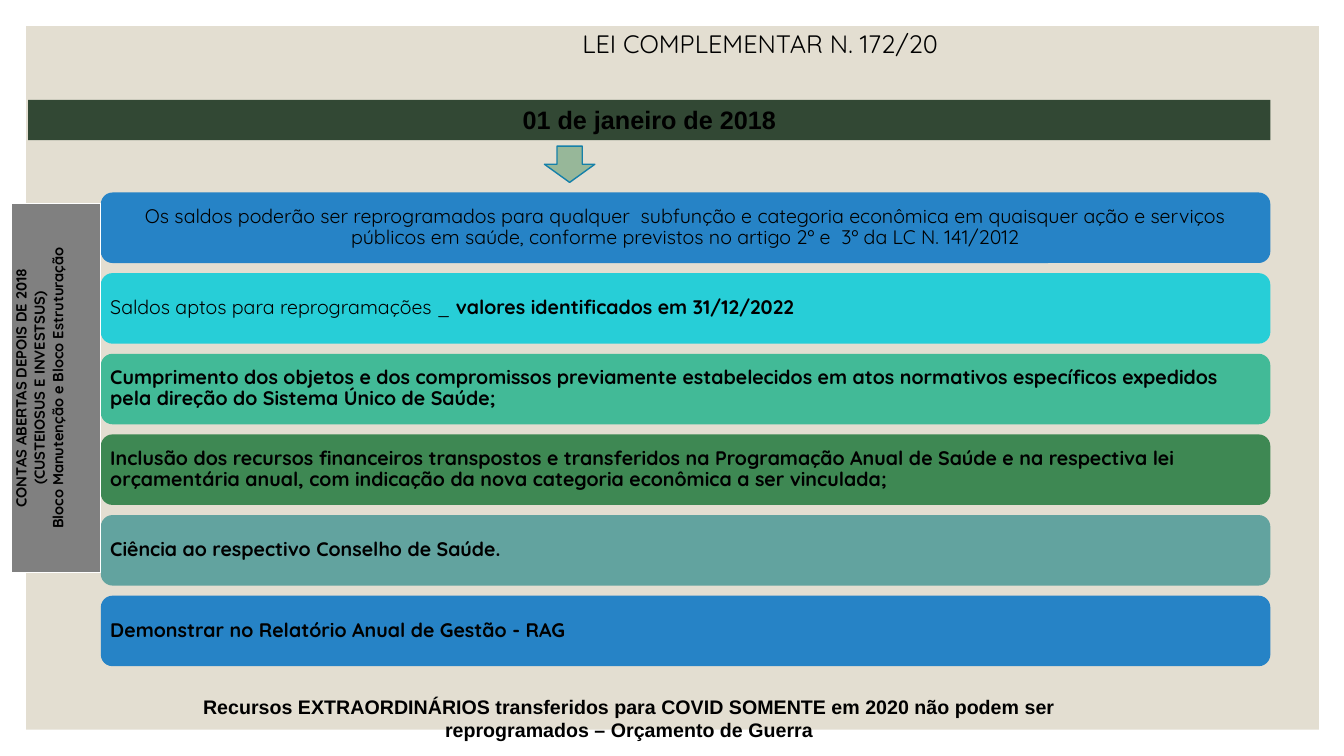
from dataclasses import dataclass

from lxml import etree
from pptx import Presentation
from pptx.dml.color import RGBColor
from pptx.enum import shapes, text
from pptx.oxml import ns
from pptx.util import Inches, Pt


@dataclass(frozen=True)
class Theme:
    body_font: str = "Quicksand"
    accent_font: str = "Arial"
    heading_size: float = 18
    body_size: float = 14
    side_size: float = 10.5
    ink: str = "000000"
    panel: str = "E3DED1"
    date_bar: str = "324834"
    side: str = "808080"
    border: str = "FFFFFF"
    arrow: str = "97B799"
    arrow_line: str = "1580A9"
    blue: str = "2683C6"
    cyan: str = "27CED7"
    mint: str = "42BA97"
    green: str = "3E8853"
    teal: str = "62A39F"


THEME = Theme()
CENTER = text.PP_ALIGN.CENTER
LEFT = text.PP_ALIGN.LEFT
RULES = [
    (THEME.blue, CENTER, [(
        "Os saldos poderão ser reprogramados para qualquer  subfunção e categoria "
        "econômica em quaisquer ação e serviços públicos em saúde, conforme previstos "
        "no artigo 2º e  3º da LC N. 141/2012", False)]),
    (THEME.cyan, LEFT, [
        ("Saldos aptos para reprogramações _ ", False),
        ("valores identificados em 31/12/2022", True)]),
    (THEME.mint, LEFT, [(
        "Cumprimento dos objetos e dos compromissos previamente estabelecidos em atos "
        "normativos específicos expedidos pela direção do Sistema Único de Saúde;", True)]),
    (THEME.green, LEFT, [(
        "Inclusão dos recursos financeiros transpostos e transferidos na Programação "
        "Anual de Saúde e na respectiva lei orçamentária anual, com indicação da nova "
        "categoria econômica a ser vinculada;", True)]),
    (THEME.teal, LEFT, [("Ciência ao respectivo Conselho de Saúde.", True)]),
    (THEME.blue, LEFT, [("Demonstrar no Relatório Anual de Gestão - RAG", True)]),
]
ACCOUNTS = [
    "CONTAS ABERTAS DEPOIS DE 2018",
    "(CUSTEIOSUS E INVESTSUS)",
    "Bloco Manutenção e Bloco Estruturação",
]


def place(*lengths):
    return [Inches(length) for length in lengths]


def write(para, spans, size, font=THEME.body_font, align=CENTER):
    para.alignment = align
    para.font.name = font
    para.font.size = Pt(size)
    para.font.color.rgb = RGBColor.from_string(THEME.ink)
    weights = {bold for _, bold in spans}
    if len(weights) == 1:
        para.font.bold = weights.pop()
    for words, bold in spans:
        span = para.add_run()
        span.text = words
        if para.font.bold is None:
            span.font.bold = bold


def add_block(page, kind, at, fill, line=None):
    block = page.shapes.add_shape(kind, *place(*at))
    block.shadow.inherit = False
    block.fill.solid()
    block.fill.fore_color.rgb = RGBColor.from_string(fill)
    if line:
        block.line.color.rgb = RGBColor.from_string(line)
        block.line.width = Pt(1)
    else:
        block.line.fill.background()
    return block


def add_panel(page):
    panel = add_block(page, shapes.MSO_SHAPE.RECTANGLE, (0.26, 0.26, 12.82, 6.98), THEME.panel)
    page.shapes.title.element.addprevious(panel.element)


def add_heading(page, words):
    title = page.shapes.title
    title.left, title.top, title.width, title.height = place(3.4, 0.23, 8.28, 0.4)
    frame = title.text_frame
    frame.auto_size = text.MSO_AUTO_SIZE.NONE
    frame.vertical_anchor = text.MSO_ANCHOR.TOP
    write(frame.paragraphs[0], [(words, False)], THEME.heading_size)


def add_rule(page, index, fill, align, spans):
    at = (1, 1.91 + 0.8 * index, 11.6, 0.7)
    frame = add_block(page, shapes.MSO_SHAPE.ROUNDED_RECTANGLE, at, fill).text_frame
    frame.word_wrap = True
    frame.vertical_anchor = text.MSO_ANCHOR.MIDDLE
    frame.margin_left = frame.margin_right = Inches(0.06)
    frame.margin_top = frame.margin_bottom = Inches(0.06)
    para = frame.paragraphs[0]
    para.line_spacing = 0.9
    write(para, spans, THEME.body_size, align=align)


def add_date_bar(page, words):
    bar = add_block(page, shapes.MSO_SHAPE.RECTANGLE, (0.28, 0.99, 12.32, 0.4), THEME.date_bar)
    bar.text_frame.vertical_anchor = text.MSO_ANCHOR.TOP
    write(bar.text_frame.paragraphs[0], [(words, True)], THEME.heading_size, THEME.accent_font)


def add_borders(cell, color):
    properties = cell._tc.get_or_add_tcPr()
    for index, side in enumerate(("a:lnL", "a:lnR", "a:lnT", "a:lnB")):
        line = etree.Element(ns.qn(side), w=str(Pt(1)))
        fill = etree.SubElement(line, ns.qn("a:solidFill"))
        etree.SubElement(fill, ns.qn("a:srgbClr"), val=color)
        properties.insert(index, line)


def add_side_table(page, lines):
    table = page.shapes.add_table(1, 1, *place(0.11, 2.02, 0.89, 3.66)).table
    cell = table.cell(0, 0)
    cell.fill.solid()
    cell.fill.fore_color.rgb = RGBColor.from_string(THEME.side)
    cell.vertical_anchor = text.MSO_ANCHOR.MIDDLE
    cell.margin_left = cell.margin_right = cell.margin_top = Inches(0.01)
    cell.margin_bottom = 0
    cell._tc.get_or_add_tcPr().set("vert", "vert270")
    add_borders(cell, THEME.border)
    frame = cell.text_frame
    for index, line in enumerate(lines):
        para = frame.add_paragraph() if index else frame.paragraphs[0]
        write(para, [(line, True)], THEME.side_size)


def add_footer(page, words):
    box = page.shapes.add_textbox(*place(1.58, 6.84, 9.32, 0.57))
    box.text_frame.word_wrap = True
    write(box.text_frame.paragraphs[0], [(words, True)], THEME.body_size, THEME.accent_font)


def main():
    deck = Presentation()
    deck.slide_width, deck.slide_height = place(13.33, 7.5)
    page = deck.slides.add_slide(deck.slide_layouts[5])
    add_panel(page)
    add_heading(page, "LEI COMPLEMENTAR N. 172/20")
    for index, (fill, align, spans) in enumerate(RULES):
        add_rule(page, index, fill, align, spans)
    add_date_bar(page, "01 de janeiro de 2018")
    add_side_table(page, ACCOUNTS)
    add_block(page, shapes.MSO_SHAPE.DOWN_ARROW, (5.4, 1.45, 0.5, 0.36),
              THEME.arrow, THEME.arrow_line)
    add_footer(page, "Recursos EXTRAORDINÁRIOS transferidos para COVID SOMENTE em 2020 "
                     "não podem ser reprogramados – Orçamento de Guerra")
    deck.save("out.pptx")


if __name__ == "__main__":
    main()
